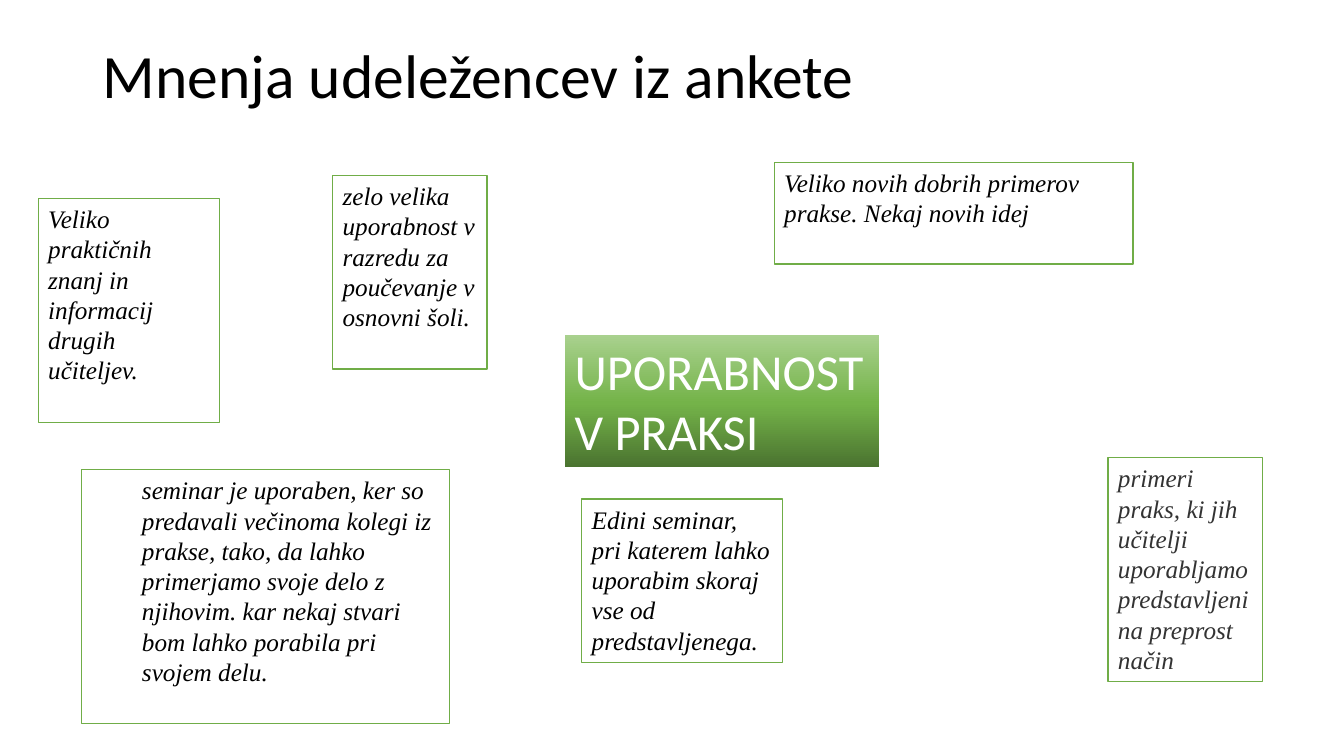
import copy

import pptx
import pptx.dml.color
import pptx.enum.shapes
import pptx.enum.text
import pptx.util

EMU_PER_PX = 9144  # 100 px to the inch

QUOTES = [
    ((38, 197, 180, 222), "Veliko praktičnih znanj in informacij drugih učiteljev.", {}),
    ((577, 495, 199, 162), "Edini seminar, pri katerem lahko uporabim skoraj vse od predstavljenega.", {}),
    ((768, 161, 356, 101), "Veliko novih dobrih primerov prakse. Nekaj novih idej", {}),
    ((330, 174, 153, 192), "zelo velika uporabnost v razredu za poučevanje v osnovni šoli.", {}),
    ((81, 466, 365, 252),
     "seminar je uporaben, ker so predavali večinoma kolegi iz prakse, tako, da lahko "
     "primerjamo svoje delo z njihovim. kar nekaj stvari bom lahko porabila pri svojem delu.",
     {"indent": 50}),
    ((1099, 454, 153, 222),
     "primeri praks, ki jih učitelji uporabljamo predstavljeni na preprost način",
     {"color": "333333"}),
]


def px(length):
    return pptx.util.Emu(length * EMU_PER_PX)


def rgb(value):
    return pptx.dml.color.RGBColor.from_string(value)


def write(shape, text, size=18, font="Calibri", color="000000", italic=False,
          indent=0, line_spacing=None):
    frame = shape.text_frame
    frame.word_wrap = True
    frame.vertical_anchor = pptx.enum.text.MSO_ANCHOR.TOP
    para = frame.paragraphs[0]
    para.alignment = pptx.enum.text.PP_ALIGN.LEFT
    para.line_spacing = line_spacing
    if indent:
        para._p.get_or_add_pPr().set("marL", str(px(indent)))
    span = para.add_run()
    span.text = text
    span.font.size = pptx.util.Pt(size)
    span.font.name = font
    span.font.italic = italic
    span.font.color.rgb = rgb(color)


class SurveySlide:
    quote_font = "Times New Roman"
    quote_fill = "FFFFFF"
    quote_line = "70AD47"
    theme_stops = [(0, "4B7430"), (0.48, "74B349"), (1, "A9D18E")]

    def __init__(self, deck):
        self.page = deck.slides.add_slide(deck.slide_layouts[6])

    def title(self, bounds, text):
        box = self.page.shapes.add_textbox(*map(px, bounds))
        write(box, text, size=44, line_spacing=0.9)

    def rectangle(self, bounds):
        box = self.page.shapes.add_shape(
            pptx.enum.shapes.MSO_SHAPE.RECTANGLE, *map(px, bounds))
        box.shadow.inherit = False
        return box

    def quote(self, bounds, text, **text_format):
        box = self.rectangle(bounds)
        box.fill.solid()
        box.fill.fore_color.rgb = rgb(self.quote_fill)
        box.line.color.rgb = rgb(self.quote_line)
        box.line.width = pptx.util.Pt(1)
        write(box, text, font=self.quote_font, italic=True, **text_format)

    def theme(self, bounds, text):
        """Add the central topic on a gradient that darkens downwards."""
        box = self.rectangle(bounds)
        box.line.fill.background()
        box.fill.gradient()
        box.fill.gradient_angle = 90
        first_stop = box.fill.gradient_stops[0]._gs
        first_stop.addnext(copy.deepcopy(first_stop))
        for stop, (position, color) in zip(box.fill.gradient_stops, self.theme_stops):
            stop.position = position
            stop.color.rgb = rgb(color)
        write(box, text, size=36, color="FFFFFF")


def main():
    deck = pptx.Presentation()
    deck.slide_width, deck.slide_height = px(1333), px(750)
    slide = SurveySlide(deck)
    slide.title((92, 40, 1150, 145), "Mnenja udeležencev iz ankete")
    slide.theme((560, 332, 312, 131), "UPORABNOST V PRAKSI")
    for bounds, text, text_format in QUOTES:
        slide.quote(bounds, text, **text_format)
    deck.save("out.pptx")


if __name__ == "__main__":
    main()
